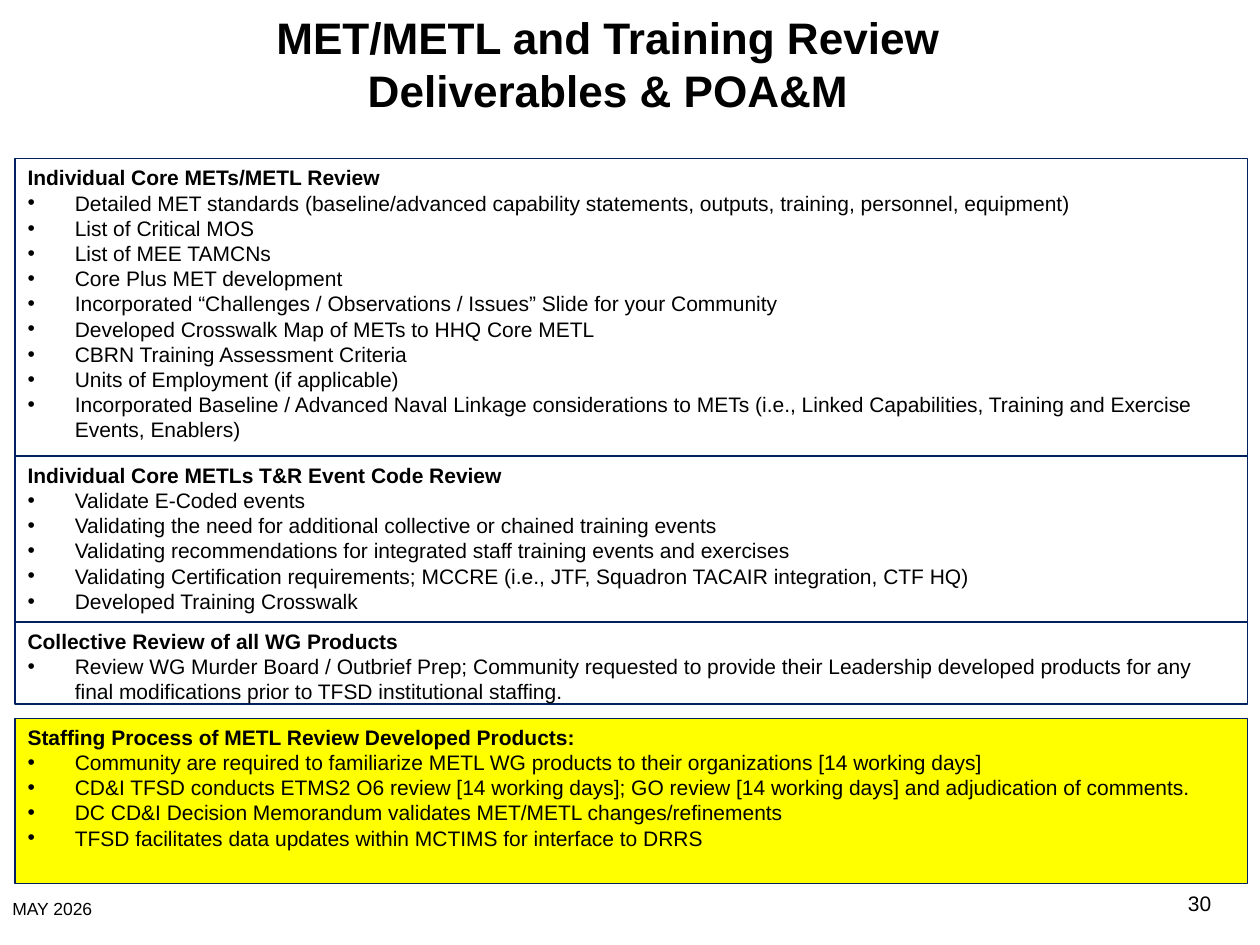
from lxml.etree import SubElement
from pptx import Presentation
from pptx.dml.color import RGBColor as RGB
from pptx.enum.shapes import MSO_SHAPE as Geo
from pptx.enum.text import MSO_ANCHOR as Anchor, MSO_AUTO_SIZE as Fit, PP_ALIGN as Align
from pptx.oxml.ns import qn
from pptx.util import Pt

BLACK = RGB(0x00, 0x00, 0x00)
WHITE = RGB(0xFF, 0xFF, 0xFF)
NAVY = RGB(0x00, 0x20, 0x60)
YELLOW = RGB(0xFF, 0xFF, 0x00)
FONT = "Arial"
LEFT, WIDE, INDENT = 8.64, 704.16, 27

PANELS = [
    (90.72, 169.92, WHITE, "Individual Core METs/METL Review", [
        "Detailed MET standards (baseline/advanced capability statements, outputs, training, personnel, equipment)",
        "List of Critical MOS",
        "List of MEE TAMCNs",
        "Core Plus MET development",
        "Incorporated “Challenges / Observations / Issues” Slide for your Community",
        "Developed Crosswalk Map of METs to HHQ Core METL",
        "CBRN Training Assessment Criteria",
        "Units of Employment (if applicable)",
        "Incorporated Baseline / Advanced Naval Linkage considerations to METs (i.e., Linked Capabilities, Training and Exercise Events, Enablers)",
    ]),
    (260.64, 94.68, WHITE, "Individual Core METLs T&R Event Code Review", [
        "Validate E-Coded events",
        "Validating the need for additional collective or chained training events",
        "Validating recommendations for integrated staff training events and exercises",
        "Validating Certification requirements; MCCRE (i.e., JTF, Squadron TACAIR integration, CTF HQ)",
        "Developed Training Crosswalk",
    ]),
    (355.5, 46.8, WHITE, "Collective Review of all WG Products", [
        "Review WG Murder Board / Outbrief Prep; Community requested to provide their Leadership developed products for any final modifications prior to TFSD institutional staffing.",
    ]),
    (410.4, 94.68, YELLOW, "Staffing Process of METL Review Developed Products:", [
        "Community are required to familiarize METL WG products to their organizations [14 working days]",
        "CD&I TFSD conducts ETMS2 O6 review [14 working days]; GO review [14 working days] and adjudication of comments.",
        "DC CD&I Decision Memorandum validates MET/METL changes/refinements",
        "TFSD facilitates data updates within MCTIMS for interface to DRRS",
    ]),
]


def write(para, text, size=12, bold=False, align=Align.LEFT, bullet=False):
    if bullet:
        props = para._p.get_or_add_pPr()
        props.set("marL", str(Pt(INDENT)))
        props.set("indent", str(-Pt(INDENT)))
        SubElement(props, qn("a:buFont"), typeface=FONT)
        SubElement(props, qn("a:buChar"), char="•")
    para.alignment = align
    para.line_spacing = Pt(round(size * 1.2, 2))
    run = para.add_run()
    run.text = text
    font = run.font
    font.name, font.size, font.bold = FONT, Pt(size), bold
    font.color.rgb = BLACK


def add_title(slide, box, text):
    title = slide.shapes.title
    title.left, title.top, title.width, title.height = map(Pt, box)
    frame = title.text_frame
    frame.auto_size = Fit.NONE
    frame.word_wrap = True
    frame.vertical_anchor = Anchor.MIDDLE
    write(frame.paragraphs[0], text, size=25.2, bold=True, align=Align.CENTER)


def add_panel(slide, box, fill, head, items):
    panel = slide.shapes.add_shape(Geo.RECTANGLE, *map(Pt, box))
    panel.shadow.inherit = False
    panel.fill.solid()
    panel.fill.fore_color.rgb = fill
    panel.line.color.rgb = NAVY
    panel.line.width = Pt(0.75)
    frame = panel.text_frame
    frame.word_wrap = True
    frame.vertical_anchor = Anchor.TOP
    write(frame.paragraphs[0], head, bold=True)
    for item in items:
        write(frame.add_paragraph(), item, bullet=True)


def add_note(slide, box, text, size):
    frame = slide.shapes.add_textbox(*map(Pt, box)).text_frame
    frame.word_wrap = True
    write(frame.paragraphs[0], text, size=size)


def main():
    deck = Presentation()
    deck.slide_width, deck.slide_height = Pt(720), Pt(540)
    slide = deck.slides.add_slide(deck.slide_layouts[5])
    add_title(slide, (77.04, 0, 540.72, 72), "MET/METL and Training Review Deliverables & POA&M")
    for top, high, fill, head, items in PANELS:
        add_panel(slide, (LEFT, top, WIDE, high), fill, head, items)
    add_note(slide, (671.76, 505.44, 32.4, 28.8), "30", 12)
    add_note(slide, (0, 509.76, 122.4, 27.36), "MAY 2026", 10)
    deck.save("out.pptx")


if __name__ == "__main__":
    main()
